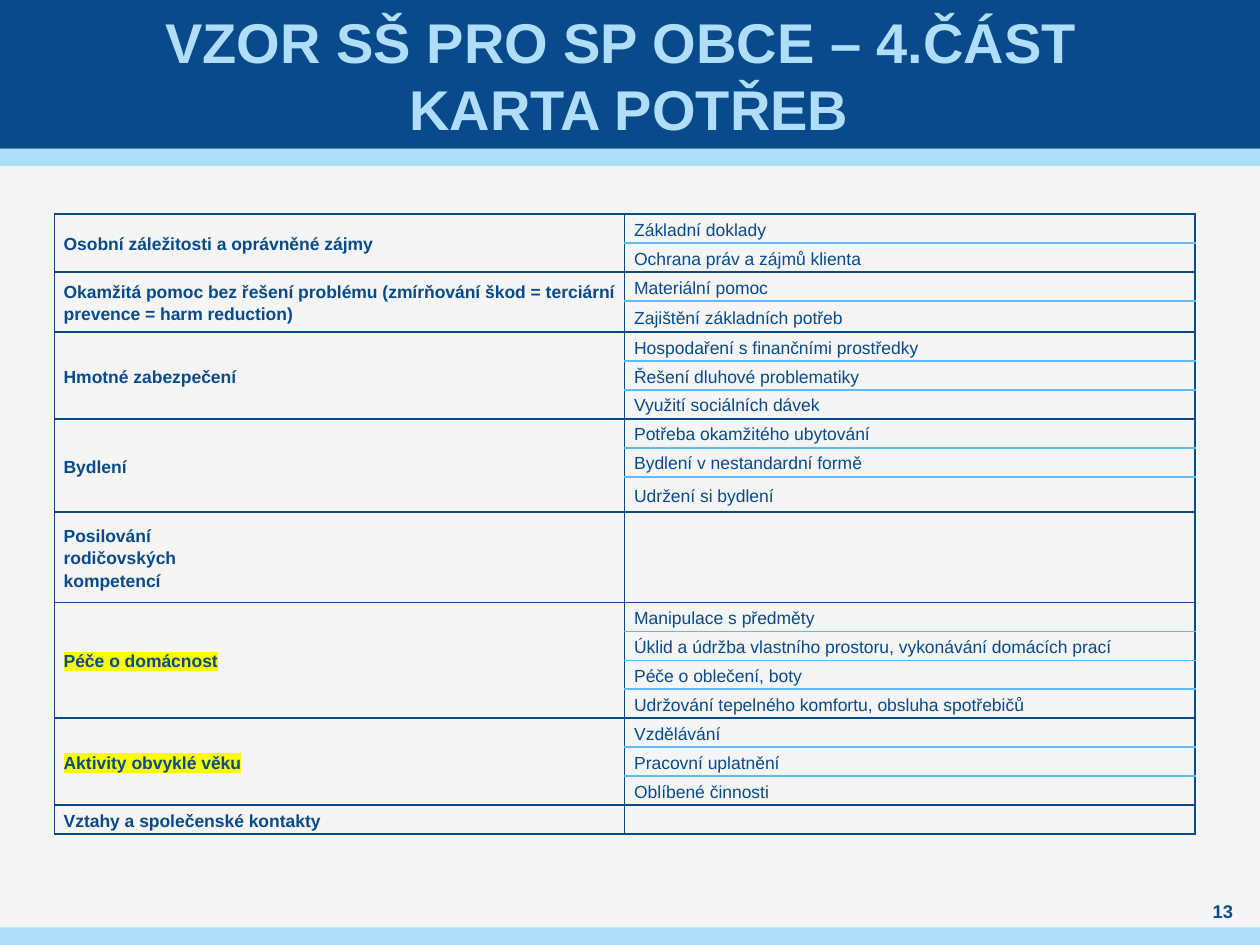
from lxml import etree
from pptx import Presentation
from pptx.dml.color import RGBColor
from pptx.enum import shapes, text
from pptx.oxml import ns
from pptx.util import Pt

NAVY, SKY, BLUE, PAPER, YELLOW = "084A8B", "AFDDFA", "5FBBF5", "F5F5F5", "FFFF00"


def rgb(color):
    return RGBColor.from_string(color)


def write(tf, content, size=10, color=NAVY, bold=True, align=None, spacing=None, highlight=None):
    tf.text = content
    tf.word_wrap = True
    tf.vertical_anchor = text.MSO_ANCHOR.MIDDLE
    for p in tf.paragraphs:
        p.alignment = align
        p.line_spacing = spacing
        for r in p.runs:
            r.font.size, r.font.bold = Pt(size), bold
            r.font.color.rgb = rgb(color)
            if highlight:
                mark = etree.SubElement(r.font._element, ns.qn("a:highlight"))
                etree.SubElement(mark, ns.qn("a:srgbClr"), val=highlight)
            r.font.name = "Arial"
        etree.SubElement(p._p, ns.qn("a:endParaRPr"), sz=str(size * 100).split(".")[0])


prs = Presentation()
prs.slide_width, prs.slide_height = Pt(720), Pt(540)
s = prs.slides.add_slide(prs.slide_layouts[5])
s.background.fill.solid()
s.background.fill.fore_color.rgb = rgb(PAPER)

for top, height, color in [(85, 10, SKY), (0, 85, NAVY), (530, 10, SKY)]:
    sp = s.shapes.add_shape(shapes.MSO_SHAPE.RECTANGLE, 0, Pt(top), Pt(720), Pt(height))
    sp.shadow.inherit = False
    sp.fill.solid()
    sp.fill.fore_color.rgb = rgb(color)
    sp.line.fill.background()

title = s.shapes.title
title.element.getparent().append(title.element)
title.left, title.top, title.width, title.height = Pt(28), 0, Pt(663), Pt(85)
tf = title.text_frame
tf.margin_left = tf.margin_right = Pt(3)
tf.margin_top = tf.margin_bottom = 0
write(tf, "VZOR SŠ PRO SP OBCE – 4.ČÁST \vKARTA POTŘEB", size=32, color=SKY,
      align=text.PP_ALIGN.CENTER)

groups = [
    ("Osobní záležitosti a oprávněné zájmy", None,
     ["Základní doklady", "Ochrana práv a zájmů klienta"]),
    ("Okamžitá pomoc bez řešení problému (zmírňování škod = terciární prevence = harm reduction)",
     None, ["Materiální pomoc", "Zajištění základních potřeb"]),
    ("Hmotné zabezpečení", None,
     ["Hospodaření s finančními prostředky", "Řešení dluhové problematiky",
      "Využití sociálních dávek"]),
    ("Bydlení", None,
     ["Potřeba okamžitého ubytování", "Bydlení v nestandardní formě", "Udržení si bydlení"]),
    ("Posilování\nrodičovských\nkompetencí", None, [""]),
    ("Péče o domácnost", YELLOW,
     ["Manipulace s předměty", "Úklid a údržba vlastního prostoru, vykonávání domácích prací",
      "Péče o oblečení, boty", "Udržování tepelného komfortu, obsluha spotřebičů"]),
    ("Aktivity obvyklé věku", YELLOW,
     ["Vzdělávání", "Pracovní uplatnění", "Oblíbené činnosti"]),
    ("Vztahy a společenské kontakty", None, [""]),
]
heights = [16.56] * sum(len(needs) for _, _, needs in groups)
heights[3], heights[9], heights[10] = 17.7, 20.2, 51.5

table = s.shapes.add_table(len(heights), 2, Pt(31), Pt(122.4), Pt(652), Pt(sum(heights))).table
table.first_row = table.horz_banding = False
for column in table.columns:
    column.width = Pt(326)
for row, height in zip(table.rows, heights):
    row.height = Pt(height)

top = 0
for area, highlight, needs in groups:
    last = len(needs) - 1
    for i, need in enumerate(needs):
        for col in (0, 1):
            cell = table.cell(top + i, col)
            cell.margin_left = cell.margin_right = Pt(5.4)
            cell.margin_top = cell.margin_bottom = 0
            cell.vertical_anchor = text.MSO_ANCHOR.MIDDLE
            inner = BLUE if col else NAVY
            borders = {"lnL": NAVY, "lnR": NAVY, "lnT": inner if i else NAVY,
                       "lnB": inner if i < last else NAVY}
            for side, color in borders.items():
                ln = etree.SubElement(cell._tc.get_or_add_tcPr(), ns.qn("a:" + side), w=str(Pt(1)))
                line_fill = etree.SubElement(ln, ns.qn("a:solidFill"))
                etree.SubElement(line_fill, ns.qn("a:srgbClr"), val=color)
            cell.fill.solid()
            cell.fill.fore_color.rgb = rgb(PAPER)
        write(table.cell(top + i, 1).text_frame, need, bold=False, spacing=1.15)
    write(table.cell(top, 0).text_frame, area, spacing=1.15, highlight=highlight)
    if last:
        table.cell(top, 0).merge(table.cell(top + last, 0))
    top += len(needs)

tf = s.shapes.add_textbox(Pt(680.4), Pt(513.4), Pt(36.7), Pt(14.4)).text_frame
tf.margin_left = tf.margin_right = tf.margin_top = tf.margin_bottom = 0
write(tf, "13", size=10.5, align=text.PP_ALIGN.CENTER)

prs.save("out.pptx")
